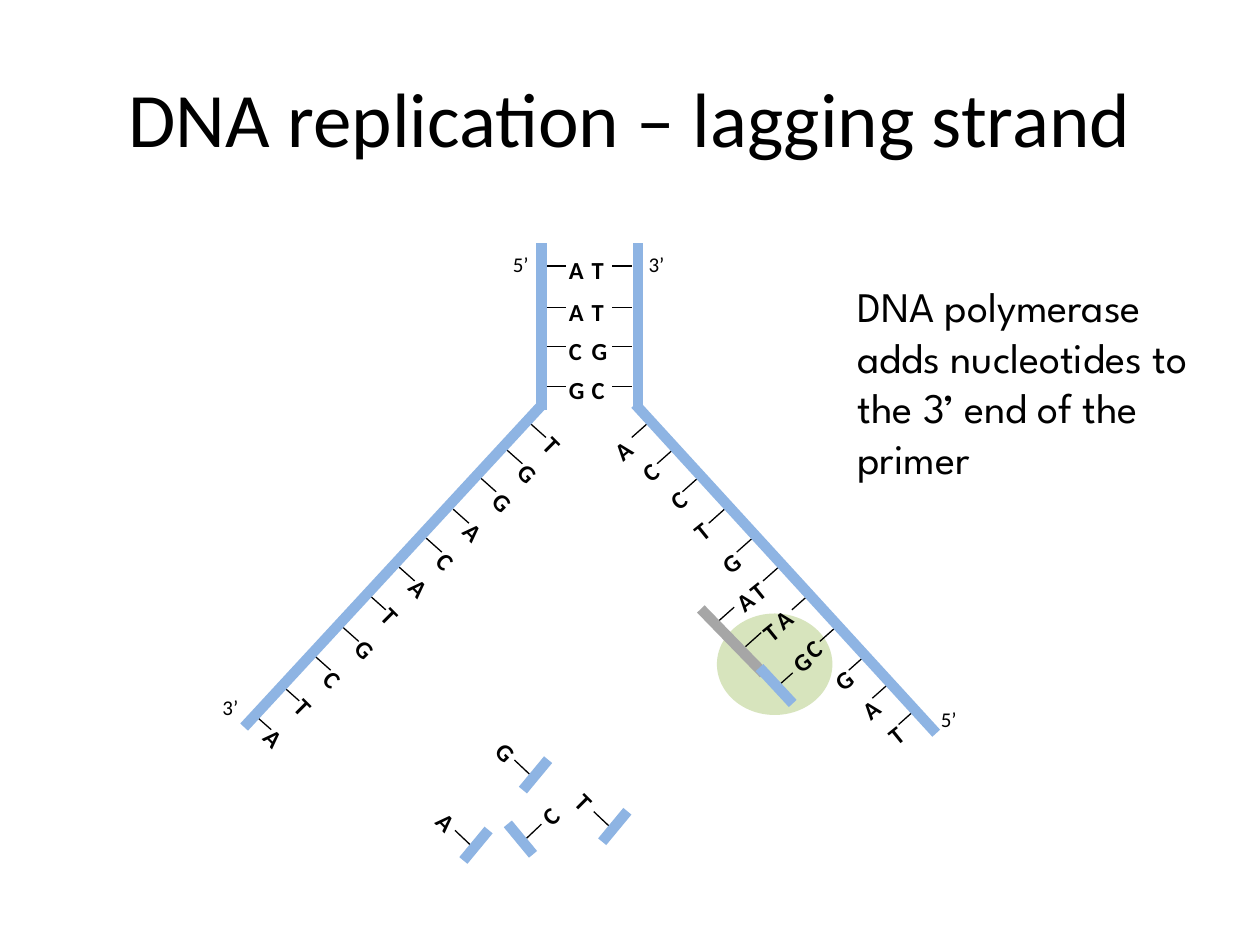
from lxml.etree import SubElement
from pptx import Presentation
from pptx.dml.color import RGBColor
from pptx.enum.shapes import MSO_CONNECTOR, MSO_SHAPE
from pptx.enum.text import MSO_ANCHOR, MSO_AUTO_SIZE, PP_ALIGN
from pptx.oxml.ns import qn
from pptx.util import Pt

COLORS = {"text": "000000", "strand": "8EB4E3", "primer": "A6A6A6", "enzyme": "D7E4BD"}
BODY_FONT = "Calibri"
NOTE_FONT = "League Spartan"
TITLE = "DNA replication – lagging strand"
NOTE = "DNA polymerase adds nucleotides to the 3’ end of the primer"

BOX = 22.3            # side of a base letter's box
RUNG = (9, 8)         # run and rise of a slanted rung
STRAND_WIDTH = 6
RUNG_WIDTH = 0.75

# Left base, right base, top of the letters, height of the rung
PAIRS = [
    ("A", "T", 139.5, 152),
    ("A", "T", 163.5, 175.7),
    ("C", "G", 186, 198),
    ("G", "C", 208, 221),
]
# Base, left and top of its letter, start of its rung
LEFT_ARM = [
    ("T", 307, 241, 303, 242), ("G", 292.5, 256.5, 289.5, 257),
    ("G", 278, 273, 274.5, 273), ("A", 261.5, 290, 259, 291),
    ("C", 246, 307.5, 243.5, 307.5), ("A", 230.5, 322, 228, 324),
    ("T", 214.5, 339, 211.5, 340.5), ("G", 199.5, 357, 196, 358.5),
    ("C", 181.5, 375, 180, 375), ("T", 165, 391, 162, 392.5),
    ("A", 147.5, 408, 146, 409),
]
RIGHT_ARM = [
    ("A", 342.5, 243.5, 370, 242), ("C", 358.5, 255.5, 384.5, 257),
    ("C", 374.5, 271.5, 399, 273), ("T", 388, 289.5, 414, 291),
    ("G", 404, 308, 430, 307.5), ("T", 420, 323.5, 445, 324),
    ("A", 434, 340.5, 461.5, 340.5), ("C", 451.5, 357, 477.5, 358.5),
    ("G", 468.5, 375, 494, 375), ("A", 484, 391.5, 507.5, 391),
    ("T", 499, 406, 522.5, 406),
]
PRIMER = [
    ("A", 412, 330, 410.5, 355), ("T", 427.5, 347, 426, 369.5),
    ("G", 444.5, 365, 444, 392.5),
]
# Base, middle of its backbone, side on which the base sits (-1 left, 1 right)
FREE_NUCLEOTIDES = [
    ("C", 297.4, 479.5, 1), ("G", 306, 442.8, -1),
    ("A", 272, 483, -1), ("T", 351.3, 472.3, -1),
]
END_LABELS = [("5’", 286, 138), ("3’", 120, 391), ("5’", 530.5, 398), ("3’", 363.5, 138)]
STRANDS = [
    ("primer", (436.5, 385), (400.5, 348)),
    ("strand", (434, 381.5), (453, 402)),
    ("strand", (310, 231), (139.5, 415.5)),
    ("strand", (309.5, 139), (309.5, 234)),
    ("strand", (364.5, 139), (364.5, 234)),
    ("strand", (363, 231), (535, 419)),
]


def format_text(shape, text, size, font=BODY_FONT, bold=False):
    shape.text_frame.text = text
    run_font = shape.text_frame.paragraphs[0].runs[0].font
    run_font.name, run_font.size, run_font.bold = font, Pt(size), bold
    run_font.color.rgb = RGBColor.from_string(COLORS["text"])


def add_text(slide, text, left, top, width, height, size, **style):
    box = slide.shapes.add_textbox(Pt(left), Pt(top), Pt(width), Pt(height))
    box.text_frame.word_wrap = True
    format_text(box, text, size, **style)
    return box


def add_label(slide, text, left, top, width=BOX, size=14, bold=True, rotation=0):
    box = add_text(slide, text, left, top, width, BOX, size, bold=bold)
    box.rotation = rotation
    paragraph = box.text_frame.paragraphs[0]
    paragraph.line_spacing = 1.15
    paragraph.space_after = Pt(10)


def add_line(slide, start, end, color="text", width=RUNG_WIDTH):
    line = slide.shapes.add_connector(
        MSO_CONNECTOR.STRAIGHT, *(Pt(value) for value in (*start, *end)))
    line.line.color.rgb = RGBColor.from_string(COLORS[color])
    line.line.width = Pt(width)
    SubElement(line._element.spPr, qn("a:effectLst"))


def add_arm(slide, bases, rotation, run, rise):
    for base, left, top, x, y in bases:
        add_label(slide, base, left, top, rotation=rotation)
        add_line(slide, (x, y), (x + run, y + rise))


def add_free_nucleotide(slide, base, x, y, side):
    left = x + side * 14.85 - BOX / 2
    add_label(slide, base, left, y - 27, rotation=-45 * side)
    add_line(slide, (x + side * 3, y), (x + side * 12, y - 8.5))
    add_line(slide, (x - side * 7.2, y - 8.7), (x + side * 7.2, y + 8.7),
             "strand", STRAND_WIDTH)


def main():
    presentation = Presentation()
    presentation.slide_width, presentation.slide_height = Pt(720), Pt(540)
    slide = presentation.slides.add_slide(presentation.slide_layouts[5])

    title = slide.shapes.title
    title.left, title.top, title.width, title.height = Pt(36), Pt(21.6), Pt(648), Pt(90)
    format_text(title, TITLE, 44)
    title.text_frame.vertical_anchor = MSO_ANCHOR.MIDDLE
    title.text_frame.paragraphs[0].alignment = PP_ALIGN.CENTER

    polymerase = slide.shapes.add_shape(
        MSO_SHAPE.OVAL, Pt(409.7), Pt(350.6), Pt(66), Pt(58))
    polymerase.shadow.inherit = False
    polymerase.fill.solid()
    polymerase.fill.fore_color.rgb = RGBColor.from_string(COLORS["enzyme"])
    polymerase.line.fill.background()

    for left_base, right_base, top, y in PAIRS:
        add_label(slide, left_base, 318, top)
        add_label(slide, right_base, 331, top)
        add_line(slide, (312, y), (323.5, y))
        add_line(slide, (361, y), (350, y))

    run, rise = RUNG
    add_arm(slide, LEFT_ARM, 45, run, rise)
    add_arm(slide, RIGHT_ARM, 321, -run, rise)
    add_arm(slide, PRIMER, 321, run, -rise)

    for text, left, top in END_LABELS:
        add_label(slide, text, left, top, width=27.4, size=12, bold=False)
    for color, start, end in STRANDS:
        add_line(slide, start, end, color, STRAND_WIDTH)
    for nucleotide in FREE_NUCLEOTIDES:
        add_free_nucleotide(slide, *nucleotide)

    note = add_text(slide, NOTE, 483, 157, 225, 124, 24, font=NOTE_FONT)
    note.text_frame.auto_size = MSO_AUTO_SIZE.SHAPE_TO_FIT_TEXT
    presentation.save("out.pptx")


if __name__ == "__main__":
    main()
